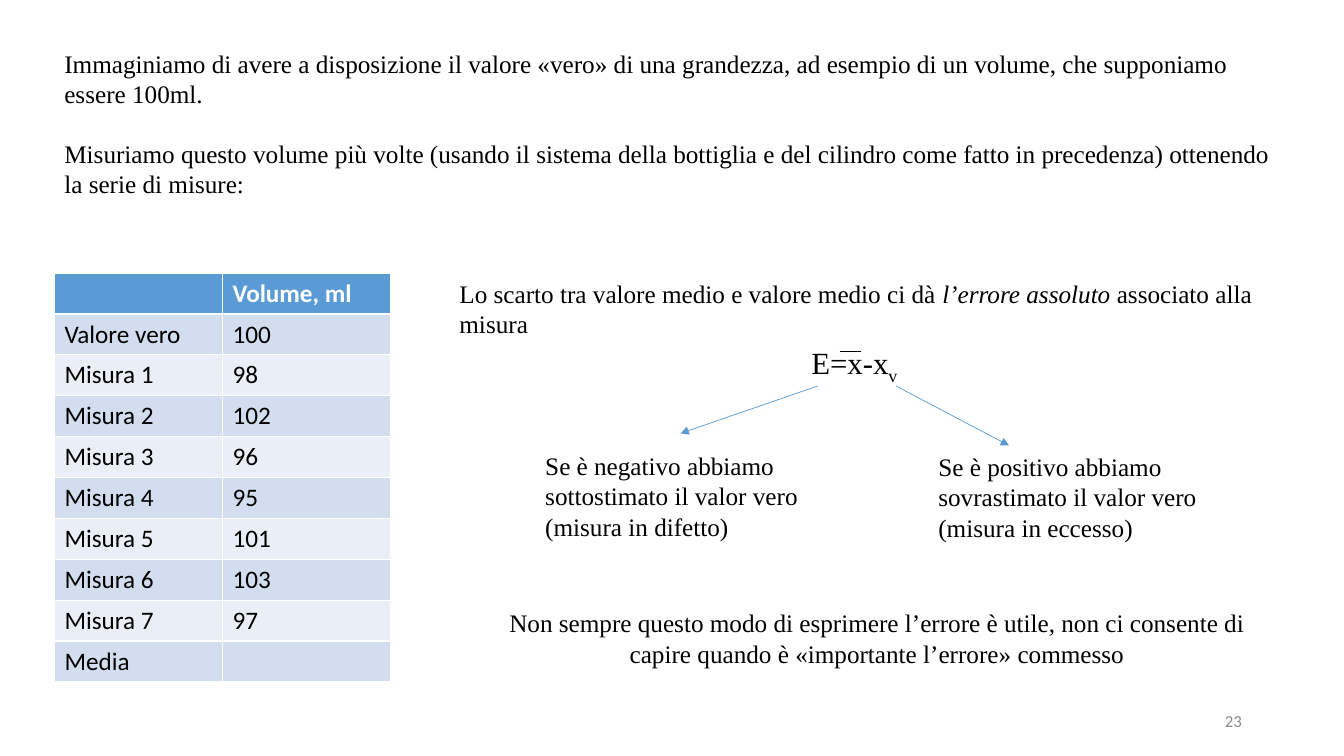
from dataclasses import dataclass

import pptx
import pptx.dml.color
import pptx.enum.shapes
import pptx.enum.text
import pptx.oxml
import pptx.oxml.ns
import pptx.util
from lxml import etree

SERIF, SANS = "Times New Roman", "Calibri"
BLACK, WHITE, BLUE, GREY = "000000", "FFFFFF", "5B9BD5", "8C8C8C"
BANDS = ("D2DEEF", "EAEFF7")
LEFT = pptx.enum.text.PP_ALIGN.LEFT
CENTER = pptx.enum.text.PP_ALIGN.CENTER
RIGHT = pptx.enum.text.PP_ALIGN.RIGHT
TOP = pptx.enum.text.MSO_ANCHOR.TOP
MIDDLE = pptx.enum.text.MSO_ANCHOR.MIDDLE


@dataclass
class Span:
    text: str
    italic: bool = False
    sub: bool = False


@dataclass
class Note:
    """A text box; its place is in percent of the slide's size."""
    left: float
    top: float
    width: float
    height: float
    paras: list[list[Span]]
    size: int = 18
    font: str = SERIF
    color: str = BLACK
    align: int = LEFT
    anchor: int = TOP
    gap: float = 0


@dataclass
class Line:
    """A straight line; its ends are in percent of the slide's size."""
    start: tuple[float, float]
    end: tuple[float, float]
    color: str = BLUE
    arrow: bool = True


NOTES = [
    Note(4.05, 5.73, 91.35, 21.6, [
        [Span("Immaginiamo di avere a disposizione il valore «vero» di una grandezza, "
              "ad esempio di un volume, che supponiamo essere 100ml.")],
        [Span("Misuriamo questo volume più volte (usando il sistema della bottiglia e del "
              "cilindro come fatto in precedenza) ottenendo la serie di misure:")],
    ], gap=21),
    Note(33.45, 36.13, 63.45, 9.4, [[
        Span("Lo scarto tra valore medio e valore medio ci dà "),
        Span("l’errore assoluto ", italic=True),
        Span("associato alla misura"),
    ]]),
    Note(59.63, 44.8, 14.17, 6.27, [[Span("E=x-x"), Span("v", sub=True)]], size=22),
    Note(39.83, 58.93, 21.53, 13.47, [
        [Span("Se è negativo abbiamo sottostimato il valor vero (misura in difetto)")]]),
    Note(69.08, 59.07, 21.53, 13.47, [
        [Span("Se è positivo abbiamo sovrastimato il valor vero (misura in eccesso)")]]),
    Note(35.63, 79.73, 59.25, 9.47, [
        [Span("Non sempre questo modo di esprimere l’errore è utile, non ci consente di "
              "capire quando è «importante l’errore» commesso")]], align=CENTER),
    Note(70.65, 92.67, 22.5, 5.33, [[Span("23")]], size=12, font=SANS,
         color=GREY, align=RIGHT, anchor=MIDDLE),
]

LINES = [
    Line((62.48, 46.53), (64.05, 46.53), BLACK, arrow=False),
    Line((60.83, 51.07), (50.63, 57.33)),
    Line((66.68, 51.07), (75.08, 58.93)),
]

VALUES = (98, 102, 96, 95, 101, 103, 97)
ROWS = [("", "Volume, ml"), ("Valore vero", "100"),
        *((f"Misura {num}", str(val)) for num, val in enumerate(VALUES, 1)),
        ("Media", "")]

deck = pptx.Presentation()
deck.slide_width = pptx.util.Inches(13.333)
deck.slide_height = pptx.util.Inches(7.5)


def wide(share: float) -> int:
    return int(deck.slide_width * share / 100)


def high(share: float) -> int:
    return int(deck.slide_height * share / 100)


def tint(code: str) -> pptx.dml.color.RGBColor:
    return pptx.dml.color.RGBColor.from_string(code)


def style(para, size: int, font: str, color: str, bold: bool = False) -> None:
    para.font.size = pptx.util.Pt(size)
    para.font.name = font
    para.font.bold = bold
    para.font.color.rgb = tint(color)


def write(slide, note: Note) -> None:
    box = slide.shapes.add_textbox(wide(note.left), high(note.top),
                                   wide(note.width), high(note.height))
    frame = box.text_frame
    frame.word_wrap = True
    frame.vertical_anchor = note.anchor
    for num, spans in enumerate(note.paras):
        para = frame.add_paragraph() if num else frame.paragraphs[0]
        para.alignment = note.align
        if num:
            para.space_before = pptx.util.Pt(note.gap)
        style(para, note.size, note.font, note.color)
        for span in spans:
            run = para.add_run()
            run.text = span.text
            if span.italic:
                run.font.italic = True
            if span.sub:
                run.font._element.set("baseline", "-25000")


def draw(slide, line: Line) -> None:
    link = slide.shapes.add_connector(
        pptx.enum.shapes.MSO_CONNECTOR.STRAIGHT,
        wide(line.start[0]), high(line.start[1]), wide(line.end[0]), high(line.end[1]))
    link.line.color.rgb = tint(line.color)
    link.line.width = pptx.util.Pt(0.5)
    if line.arrow:
        tail = etree.SubElement(link.line._get_or_add_ln(), pptx.oxml.ns.qn("a:tailEnd"))
        tail.set("type", "triangle")
    etree.SubElement(link._element.spPr, pptx.oxml.ns.qn("a:effectLst"))


def tabulate(slide, rows: list[tuple[str, str]]) -> None:
    # The default table style supplies the white cell borders
    grid = slide.shapes.add_table(len(rows), 2, wide(4.05), high(36.13),
                                  wide(25), high(5.41) * len(rows)).table
    for row, texts in enumerate(rows):
        for col, text in enumerate(texts):
            cell = grid.cell(row, col)
            cell.fill.solid()
            cell.fill.fore_color.rgb = tint(BANDS[(row - 1) % 2] if row else BLUE)
            cell.text = text
            style(cell.text_frame.paragraphs[0], 18, SANS,
                  BLACK if row else WHITE, bold=not row)


def main() -> None:
    slide = deck.slides.add_slide(deck.slide_layouts[6])
    # Measured volumes
    tabulate(slide, ROWS)
    # Explanations, formula and page number
    for note in NOTES:
        write(slide, note)
    # Bar over the mean and arrows to the two cases
    for line in LINES:
        draw(slide, line)
    deck.save("out.pptx")


if __name__ == "__main__":
    main()
